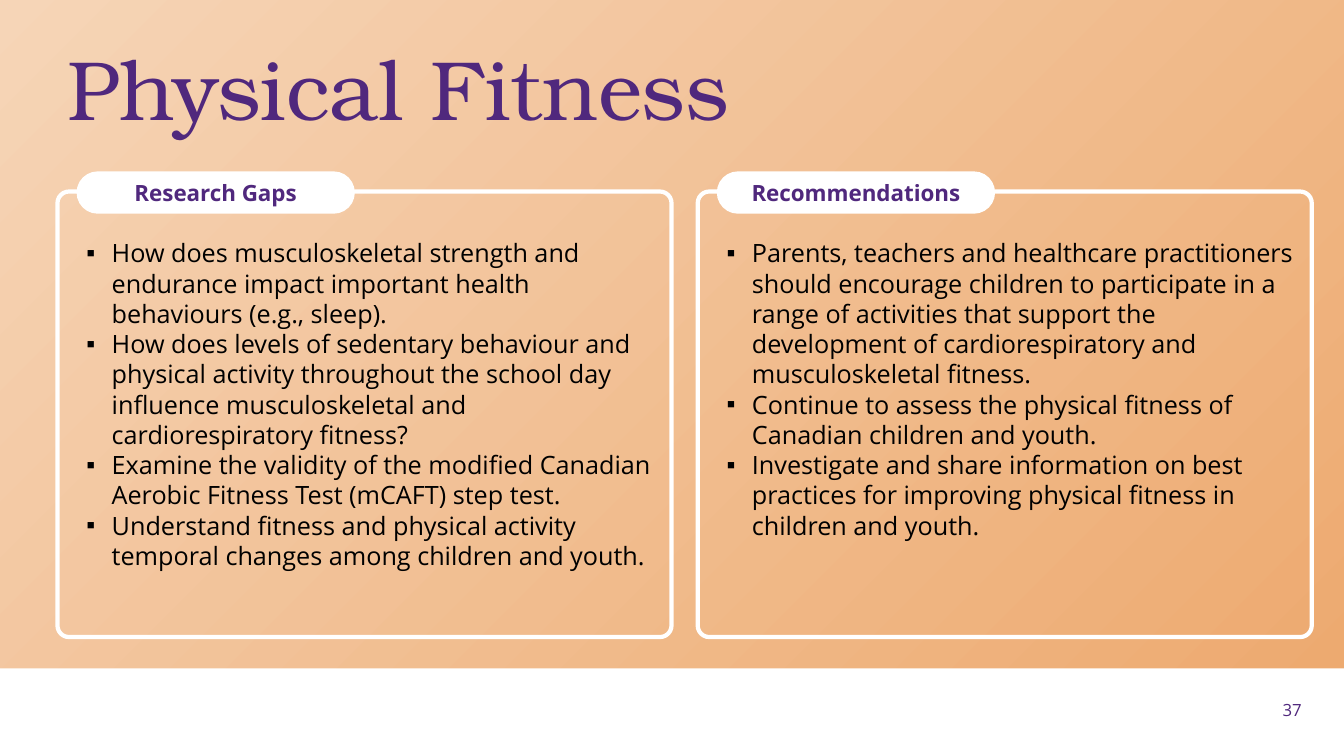
from lxml import etree
from pptx import Presentation
from pptx.dml.color import RGBColor
from pptx.enum.shapes import MSO_SHAPE
from pptx.enum.text import MSO_ANCHOR, PP_ALIGN
from pptx.oxml import parse_xml
from pptx.oxml.ns import nsdecls, qn
from pptx.util import Inches, Pt

PURPLE = RGBColor(0x50, 0x28, 0x7D)
WHITE = RGBColor(0xFF, 0xFF, 0xFF)
BLACK = RGBColor(0, 0, 0)
ORANGE = RGBColor(0xED, 0xAA, 0x70)
PEACH = RGBColor(0xF6, 0xD5, 0xB7)
BODY_FONT = "Open Sans"
TITLE_FONT = "TeX Gyre Bonum"
SLIDE_W, SLIDE_H, BAND_TOP = 13.33, 7.5, 6.63

PANELS = [
    ("Research Gaps", [
        "How does musculoskeletal strength and endurance impact important health "
        "behaviours (e.g., sleep).",
        "How does levels of sedentary behaviour and physical activity throughout the "
        "school day influence musculoskeletal and cardiorespiratory fitness?",
        "Examine the validity of the modified Canadian Aerobic Fitness Test (mCAFT) "
        "step test.",
        "Understand fitness and physical activity temporal changes among children "
        "and youth.",
    ]),
    ("Recommendations", [
        "Parents, teachers and healthcare practitioners should encourage children to "
        "participate in a range of activities that support the development of "
        "cardiorespiratory and musculoskeletal fitness.",
        "Continue to assess the physical fitness of Canadian children and youth.",
        "Investigate and share information on best practices for improving physical "
        "fitness in children and youth.",
    ]),
]


def add_run(p, text, size, color, font=BODY_FONT, bold=False):
    r = p.add_run()
    r.text = text
    r.font.size = Pt(size)
    r.font.name = font
    r.font.bold = bold
    r.font.color.rgb = color


def add_box(slide, shape_type, x, y, w, h, fill=None):
    sp = slide.shapes.add_shape(shape_type, Inches(x), Inches(y), Inches(w), Inches(h))
    sp.shadow.inherit = False
    sp.line.fill.background()
    if fill is None:
        sp.fill.background()
    else:
        sp.fill.solid()
        sp.fill.fore_color.rgb = fill
    return sp


def add_text_box(slide, x, y, w, h):
    box = slide.shapes.add_textbox(Inches(x), Inches(y), Inches(w), Inches(h))
    box.text_frame.word_wrap = True
    return box.text_frame


def add_backdrop(slide):
    # Radial gradient centred on the lower right corner
    sp = add_box(slide, MSO_SHAPE.RECTANGLE, 0, 0, SLIDE_W, BAND_TOP, ORANGE)
    gradient = parse_xml(
        f'<a:gradFill {nsdecls("a")} rotWithShape="1"><a:gsLst>'
        f'<a:gs pos="0"><a:srgbClr val="{ORANGE}"/></a:gs>'
        f'<a:gs pos="100000"><a:srgbClr val="{PEACH}"/></a:gs></a:gsLst>'
        '<a:path path="circle"><a:fillToRect l="100000" t="100000"/></a:path>'
        '</a:gradFill>')
    sp_pr = sp._element.spPr
    sp_pr.replace(sp_pr.find(qn("a:solidFill")), gradient)

    # Footer band
    band = add_box(slide, MSO_SHAPE.RECTANGLE, 0, BAND_TOP, SLIDE_W,
                   SLIDE_H - BAND_TOP, WHITE)

    # Both go behind the title
    tree = slide.shapes._spTree
    tree.insert(2, sp._element)
    tree.insert(3, band._element)


def set_title(slide, text, x, y, w, h):
    title = slide.shapes.title
    title.left, title.top = Inches(x), Inches(y)
    title.width, title.height = Inches(w), Inches(h)
    tf = title.text_frame
    tf.vertical_anchor = MSO_ANCHOR.MIDDLE
    p = tf.paragraphs[0]
    p.alignment = PP_ALIGN.LEFT
    p.line_spacing = Pt(55)
    add_run(p, text, 60, PURPLE, TITLE_FONT)


def add_bullet(p):
    pPr = p._p.get_or_add_pPr()
    pPr.set("marL", str(Inches(0.25)))
    pPr.set("indent", str(Inches(-0.25)))
    etree.SubElement(pPr, qn("a:buFont"), typeface="Arial")
    etree.SubElement(pPr, qn("a:buChar"), char="▪")


def add_panel(slide, heading, items, x, y, w, h):
    # Outlined frame
    frame = add_box(slide, MSO_SHAPE.ROUNDED_RECTANGLE, x, y, w, h)
    frame.adjustments[0] = 0.026
    frame.line.color.rgb = WHITE
    frame.line.width = Pt(3)

    # Bulleted text
    tf = add_text_box(slide, x + 0.19, y + 0.41, w - 0.23, 2.96)
    for i, item in enumerate(items):
        p = tf.paragraphs[0] if i == 0 else tf.add_paragraph()
        add_bullet(p)
        p.line_spacing = Pt(21.6)
        add_run(p, item, 18, BLACK)

    # Heading pill on the top edge
    pill = add_box(slide, MSO_SHAPE.ROUNDED_RECTANGLE, x + 0.19, y - 0.2, 2.76, 0.42, WHITE)
    pill.adjustments[0] = 0.5
    pill.text_frame.vertical_anchor = MSO_ANCHOR.MIDDLE
    p = pill.text_frame.paragraphs[0]
    p.alignment = PP_ALIGN.CENTER
    add_run(p, heading, 16, PURPLE, bold=True)


def add_page_number(slide, number, x, y, w, h):
    tf = add_text_box(slide, x, y, w, h)
    tf.vertical_anchor = MSO_ANCHOR.MIDDLE
    p = tf.paragraphs[0]
    p.alignment = PP_ALIGN.RIGHT
    add_run(p, number, 12, PURPLE)


def main():
    prs = Presentation()
    prs.slide_width, prs.slide_height = Inches(SLIDE_W), Inches(SLIDE_H)
    slide = prs.slides.add_slide(prs.slide_layouts[5])
    add_backdrop(slide)
    set_title(slide, "Physical Fitness", 0.57, 0.26, 11.5, 1.45)
    for i, (heading, items) in enumerate(PANELS):
        add_panel(slide, heading, items, 0.57 + i * 6.35, 1.9, 6.09, 4.42)
    add_page_number(slide, "37", 12.54, 6.84, 0.47, 0.4)
    prs.save("out.pptx")


if __name__ == "__main__":
    main()
